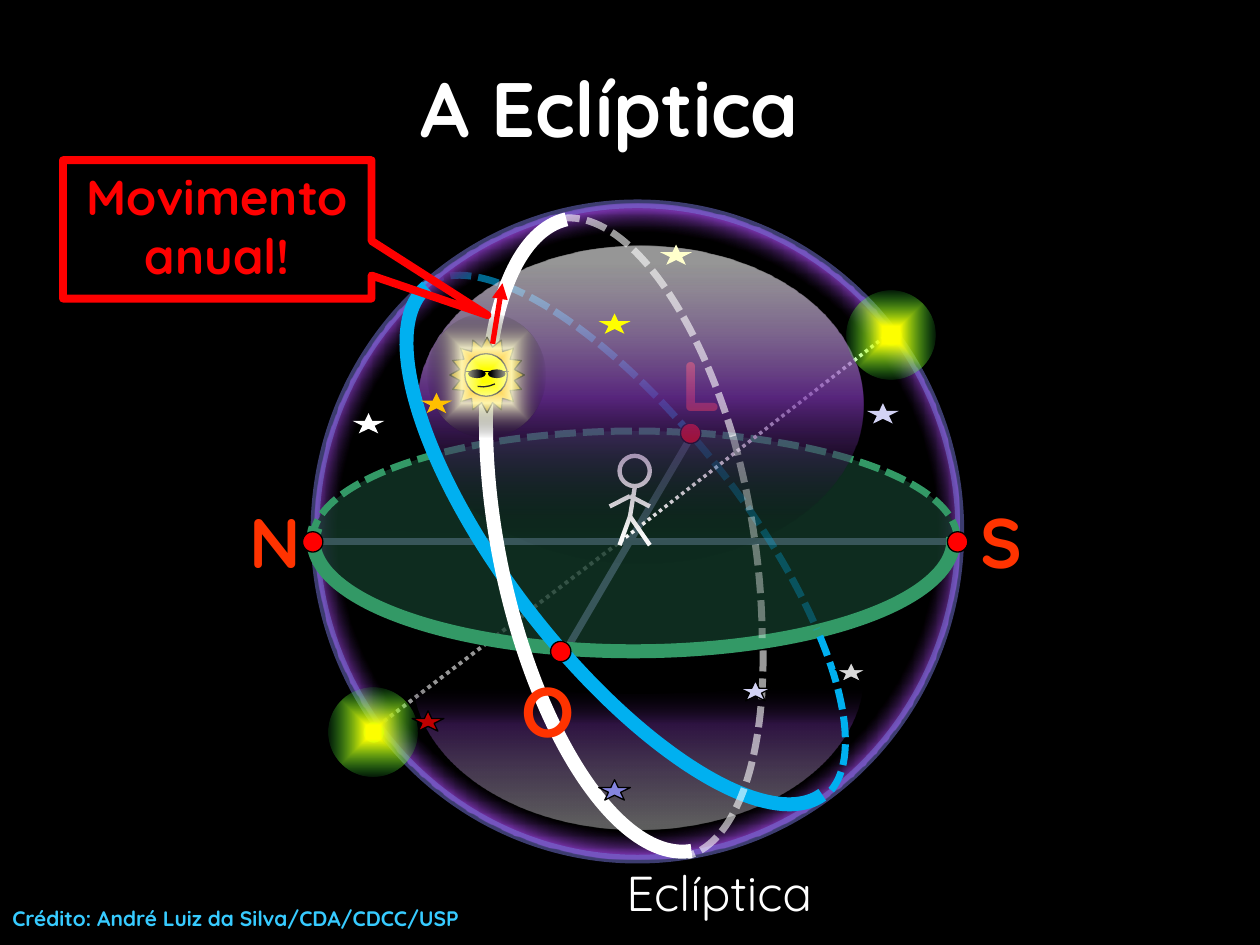
from collections import namedtuple

from pptx import Presentation
from pptx.dml.color import RGBColor
from pptx.enum.dml import MSO_LINE
from pptx.enum.shapes import MSO_CONNECTOR, MSO_SHAPE
from pptx.enum.text import MSO_ANCHOR, PP_ALIGN
from pptx.oxml import parse_xml
from pptx.oxml.ns import nsdecls
from pptx.util import Cm, Pt

BLACK = RGBColor(0x00, 0x00, 0x00)
WHITE = RGBColor(0xFF, 0xFF, 0xFF)
RED = RGBColor(0xFF, 0x00, 0x00)
DARK_RED = RGBColor(0xC0, 0x00, 0x00)
ORANGE_RED = RGBColor(0xFF, 0x33, 0x00)
AMBER = RGBColor(0xFF, 0xC0, 0x00)
YELLOW = RGBColor(0xFF, 0xFF, 0x00)
CREAM = RGBColor(0xFF, 0xFF, 0xCC)
LIME = RGBColor(0x21, 0xFF, 0x46)
GREEN = RGBColor(0x33, 0x99, 0x66)
DARK_GREEN = RGBColor(0x14, 0x3C, 0x2B)
BLUE = RGBColor(0x00, 0xB0, 0xF0)
SKY = RGBColor(0x37, 0xCB, 0xFF)
PURPLE = RGBColor(0x70, 0x30, 0xA0)
VIOLET = RGBColor(0x78, 0x78, 0xDE)
LAVENDER = RGBColor(0xA5, 0xA5, 0xE9)
PALE_LILAC = RGBColor(0xD2, 0xD2, 0xF4)
LILAC = RGBColor(0x85, 0x85, 0xE0)
GRAY = RGBColor(0xD9, 0xD9, 0xD9)

FONT = "Quicksand"
DASH, DOT = MSO_LINE.SQUARE_DOT, MSO_LINE.ROUND_DOT
Box = namedtuple("Box", "left top width height")
Gradient = namedtuple("Gradient", "stops shade angle", defaults=("", 0))


def set_alpha(shape, where, percent):
    color = shape.element.xpath(f"./p:spPr/{where}a:solidFill/a:srgbClr")[0]
    color.append(parse_xml(f'<a:alpha {nsdecls("a")} val="{percent * 1000}"/>'))


def gradient_xml(gradient):
    stops = "".join(
        f'<a:gs pos="{pos * 1000}"><a:srgbClr val="{color}">'
        f'<a:alpha val="{alpha * 1000}"/></a:srgbClr></a:gs>'
        for pos, color, alpha in gradient.stops)
    shade = f'<a:lin ang="{gradient.angle * 60000}" scaled="0"/>'
    if gradient.shade:
        shade = (f'<a:path path="{gradient.shade}"><a:fillToRect l="50000" t="50000" '
                 f'r="50000" b="50000"/></a:path>')
    return parse_xml(f'<a:gradFill {nsdecls("a")} rotWithShape="1">'
                     f'<a:gsLst>{stops}</a:gsLst>{shade}</a:gradFill>')


def stroke(shape, color, width, dash=None, alpha=100):
    if color is None:
        shape.line.fill.background()
        return
    shape.line.color.rgb = color
    shape.line.width = Pt(width)
    if dash:
        shape.line.dash_style = dash
    if alpha < 100:
        set_alpha(shape, "a:ln/", alpha)


def add_part(shapes, kind, box, at, fill=None, line=None, width=0.75, dash=None,
             line_alpha=100, fill_alpha=100, rotation=0, adjust=()):
    """Draw a preset shape at (x, y, width, height) inside the box."""
    x, y, w, h = at
    shape = shapes.add_shape(kind, Cm(box.left + x), Cm(box.top + y), Cm(w), Cm(h))
    shape.shadow.inherit = False
    shape.rotation = rotation
    for index, value in enumerate(adjust):
        shape.adjustments[index] = value
    if isinstance(fill, RGBColor):
        shape.fill.solid()
        shape.fill.fore_color.rgb = fill
        if fill_alpha < 100:
            set_alpha(shape, "", fill_alpha)
    else:
        shape.fill.background()
        if fill:
            blank = shape.element.xpath("./p:spPr/a:noFill")[0]
            blank.getparent().replace(blank, gradient_xml(fill))
    stroke(shape, line, width, dash, line_alpha)
    return shape


def add_arc(shapes, box, at, start, end, **style):
    return add_part(shapes, MSO_SHAPE.ARC, box, at, adjust=(start * 0.6, end * 0.6), **style)


def add_line(shapes, box, start, end, color, width, dash=None, arrow=False):
    points = [Cm(origin + offset) for point in (start, end)
              for origin, offset in zip(box[:2], point)]
    line = shapes.add_connector(MSO_CONNECTOR.STRAIGHT, *points)
    stroke(line, color, width, dash)
    if arrow:
        line.element.xpath("./p:spPr/a:ln")[0].append(
            parse_xml(f'<a:tailEnd {nsdecls("a")} type="triangle"/>'))
    line.element.spPr.append(parse_xml(f'<a:effectLst {nsdecls("a")}/>'))


def write(shape, text, size, color, bold=True, align=PP_ALIGN.LEFT, anchor=MSO_ANCHOR.TOP):
    frame = shape.text_frame
    frame.word_wrap = True
    frame.vertical_anchor = anchor
    para = frame.paragraphs[0]
    para.alignment = align
    span = para.add_run()
    span.text = text
    for name, value in {"name": FONT, "size": Pt(size), "bold": bold}.items():
        setattr(span.font, name, value)
    span.font.color.rgb = color


def add_text(shapes, box, text, size, color, **style):
    write(shapes.add_textbox(*(Cm(v) for v in box)), text, size, color, **style)


def add_letter(shapes, box, x, y, text):
    add_text(shapes, Box(box.left + x, box.top + y, 0.99, 1.96), text, 40, ORANGE_RED)


def add_dot(shapes, box, x, y):
    add_part(shapes, MSO_SHAPE.OVAL, box, (x, y, 0.41, 0.41), RED, BLACK)


def add_sphere(page, box):
    """Celestial sphere, horizon plane and its cardinal letters."""
    shapes = page.shapes.add_group_shape().shapes
    rim = Gradient([(65, BLACK, 40), (70, PURPLE, 100)], "circle")
    add_part(shapes, MSO_SHAPE.OVAL, box, (0, 0, box.width, box.height), rim,
             VIOLET, 5, line_alpha=50)
    add_line(shapes, box, (5.03, 9.05), (7.62, 4.63), LAVENDER, 4)
    add_line(shapes, box, (0, 6.81), (13, 6.81), LAVENDER, 4)
    add_part(shapes, MSO_SHAPE.OVAL, box, (-0.05, 4.58, 13, 4.39), DARK_GREEN,
             GREEN, 4, DASH, fill_alpha=73)
    for x, y, letter in ((-1.57, 5.82, "N"), (7.14, 2.65, "L"), (13.16, 5.82, "S")):
        add_letter(shapes, box, x, y, letter)


def add_person(page, box):
    shapes = page.shapes.add_group_shape().shapes
    add_part(shapes, MSO_SHAPE.OVAL, box, (0.2, 0, 0.61, 0.61), None, WHITE, 2.5)
    hip, shoulder = (0.41, 1.22), (0.41, 0.81)
    for start, end in (((0.51, 0.61), hip), (hip, (0.81, 1.8)), (hip, (0.2, 1.8)),
                       (shoulder, (0.81, 1.02)), ((0, 1.02), shoulder)):
        add_line(shapes, box, start, end, WHITE, 2.5)


def add_pole(page, box, core):
    """Glowing celestial pole."""
    shapes = page.shapes.add_group_shape().shapes
    glow = Gradient([(core, YELLOW, 100), (77, LIME, 2)], "shape")
    add_part(shapes, MSO_SHAPE.OVAL, box, (0.7, 0.69, 0.41, 0.41), LIME, rotation=305.7)
    add_part(shapes, MSO_SHAPE.OVAL, box, (0, 0, box.width, box.height), glow, rotation=305.7)


def add_ecliptic(page, box):
    shapes = page.shapes
    add_arc(shapes, box, (3.56, 0.21, 5.26, 12.98), 147.5, 226, line=WHITE, width=4,
            dash=DASH, line_alpha=38, rotation=170)
    shapes = page.shapes.add_group_shape().shapes
    for at, start, end in (((3.53, 0.31, 5.26, 12.98), 228.7, 269.2),
                           ((3.51, 0.18, 5.33, 12.98), 90, 149.8)):
        add_arc(shapes, box, at, start, end, line=WHITE, width=4, dash=DASH,
                line_alpha=60, rotation=168.8)
    add_arc(shapes, box, (3.68, 0.18, 5.36, 12.98), 270.3, 89.7, line=WHITE, width=8,
            rotation=168.8)


def add_sun(page, box):
    shapes = page.shapes.add_group_shape().shapes
    add_part(shapes, MSO_SHAPE.STAR_16_POINT, box, (0.46, 0.48, 1.5, 1.52), AMBER, BLACK,
             adjust=(0.375,))
    add_part(shapes, MSO_SHAPE.OVAL, box, (0.76, 0.81, 0.86, 0.86), YELLOW, BLACK)
    # Smile and sunglasses
    mouth = [(Cm(box.left + x), Cm(box.top + y))
             for x, y in ((1.02, 1.47), (1.14, 1.48), (1.26, 1.46), (1.37, 1.42))]
    builder = shapes.build_freeform(*mouth[0])
    builder.add_line_segments(mouth[1:], close=False)
    smile = builder.convert_to_shape()
    smile.shadow.inherit = False
    smile.fill.background()
    stroke(smile, BLACK, 0.75)
    for x in (0.84, 1.24):
        add_part(shapes, MSO_SHAPE.OVAL, box, (x, 1.14, 0.33, 0.15), BLACK, BLACK)
    add_line(shapes, box, (0.76, 1.17), (1.65, 1.17), BLACK, 0.75)
    glow = Gradient([(7, WHITE, 0), (42, CREAM, 85), (100, BLACK, 2)], "shape")
    add_part(shapes, MSO_SHAPE.OVAL, box, (0, 0, box.width, box.height), glow)


def add_stars(page, box):
    shapes = page.shapes.add_group_shape().shapes
    for x, y, fill, line in (
            (8.56, 9.61, PALE_LILAC, BLACK), (1.96, 10.22, DARK_RED, BLACK),
            (5.72, 11.61, LILAC, BLACK), (10.49, 9.23, GRAY, BLACK),
            (11.13, 4.02, PALE_LILAC, None), (2.13, 3.81, AMBER, None),
            (0.76, 4.22, WHITE, None), (5.72, 2.21, YELLOW, None), (6.96, 0.82, CREAM, None)):
        add_part(shapes, MSO_SHAPE.STAR_5_POINT, box, (x, y, 0.64, 0.41), fill, line)


def add_sky(page, box):
    """Everything in and on the sphere, from back to front."""
    shapes = page.shapes
    equator = {"line": BLUE, "width": 4, "dash": DASH, "rotation": 142.1}
    add_arc(shapes, box, (3.78, 0.28, 4.83, 12.98), 90, 157.9, **equator)
    center = (6.15, 6.81)
    add_line(shapes, box, (1.14, 10.62), center, WHITE, 2.25, DOT)
    add_sphere(page, box)
    # Near side of the horizon
    add_arc(shapes, box, (-0.03, 4.55, 12.9, 4.47), 359.3, 182.3, fill=DARK_GREEN,
            fill_alpha=7, line=GREEN, width=8)
    add_line(shapes, box, center, (11.56, 2.62), WHITE, 2, DOT)
    far_side = (3.89, 0.34, 4.78, 12.98)
    add_arc(shapes, box, far_side, 162.2, 242.4, line_alpha=30, **equator)
    add_person(page, Box(box.left + 5.94, box.top + 5.08, 0.81, 1.8))
    for x, y in ((7.37, 4.42), (-0.25, 6.61), (12.75, 6.61)):
        add_dot(shapes, box, x, y)
    # Lower and upper reflections
    low = Gradient([(3, WHITE, 37), (68, PURPLE, 41), (94, BLACK, 0)])
    add_part(shapes, MSO_SHAPE.MOON, box, (4.95, 6.51, 3.12, 9.09), low, rotation=270,
             adjust=(0.875,))
    add_pole(page, Box(box.left + 0.28, box.top + 9.76, 1.78, 1.78), 11)
    add_text(shapes, Box(box.left + 3.35, box.top + 13.16, 9.6, 1.45), "Eclíptica", 28,
             WHITE, bold=False, align=PP_ALIGN.CENTER)
    add_arc(shapes, box, far_side, 243.7, 269.2, **equator)
    high = Gradient([(6, WHITE, 58), (48, PURPLE, 77), (91, BLACK, 2)], angle=90)
    add_part(shapes, MSO_SHAPE.OVAL, box, (2.06, 0.84, 8.99, 6.4), high)
    add_arc(shapes, box, (3.84, 0.28, 4.85, 12.98), 270.3, 89.7, line=BLUE, width=8,
            rotation=142.1)
    add_dot(shapes, box, 4.75, 8.82)
    add_ecliptic(page, box)
    add_sun(page, Box(box.left + 2.26, box.top + 2.21, 2.39, 2.49))
    add_letter(shapes, box, 3.91, 9.23, "O")
    add_line(shapes, box, (3.58, 2.82), (3.78, 1.6), RED, 3, arrow=True)


def add_callout(page, box):
    callout = add_part(page.shapes, MSO_SHAPE.RECTANGULAR_CALLOUT, box,
                       (0, 0, box.width, box.height), None, RED, 4.5, adjust=(0.876, 0.62))
    write(callout, "Movimento anual!", 28, RED, align=PP_ALIGN.CENTER)


def main():
    deck = Presentation()
    deck.slide_width, deck.slide_height = Cm(25.4), Cm(19.05)
    page = deck.slides.add_slide(deck.slide_layouts[6])
    page.background.fill.solid()
    page.background.fill.fore_color.rgb = BLACK
    sphere = Box(6.35, 4.11, 13, 13.21)
    add_text(page.shapes, Box(1.5, 0.56, 21.59, 3.18), "A Eclíptica", 44, WHITE,
             align=PP_ALIGN.CENTER, anchor=MSO_ANCHOR.MIDDLE)
    add_sky(page, sphere)
    add_callout(page, Box(1.27, 3.23, 6.22, 2.79))
    add_stars(page, sphere)
    add_text(page.shapes, Box(0, 18.14, 25.4, 0.76),
             "Crédito: André Luiz da Silva/CDA/CDCC/USP", 12, SKY)
    add_pole(page, Box(17.07, 5.87, 1.78, 1.78), 14)
    deck.save("out.pptx")


if __name__ == "__main__":
    main()
